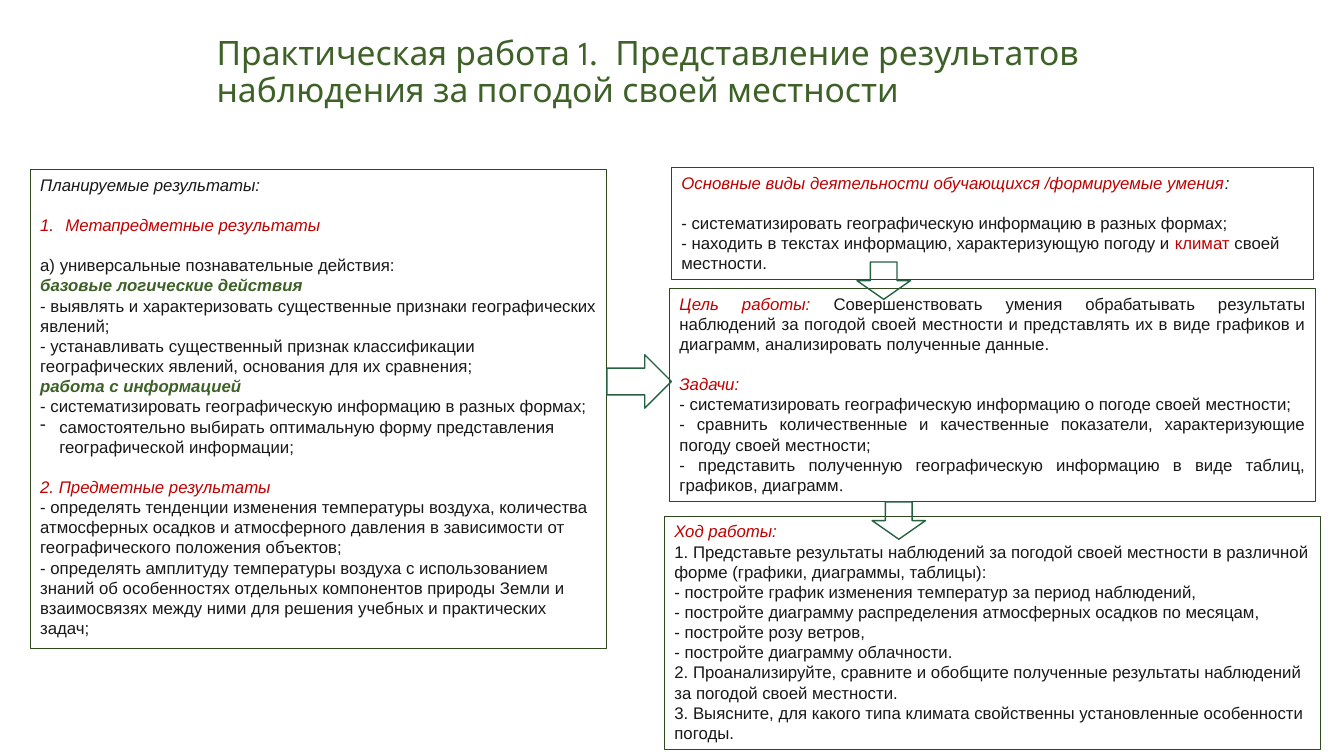
"""Build the slide about presenting local weather observations."""
import lxml.etree
import pptx
import pptx.dml.color
import pptx.enum.shapes
import pptx.enum.text
import pptx.oxml.ns
import pptx.util

Inches = pptx.util.Inches
Pt = pptx.util.Pt
ALIGN = pptx.enum.text.PP_ALIGN
ANCHOR = pptx.enum.text.MSO_ANCHOR
SHAPE = pptx.enum.shapes.MSO_SHAPE

COLORS = {
    "body": "181818",
    "red": "C00000",
    "green": "3E6128",
    "frame": "2E491E",
    "arrow": "266241",
}
STYLES = {
    "body": ("body", "Arial", False, False),
    "serif": ("body", "Times New Roman", False, False),
    "caption": ("body", "Arial", False, True),
    "heading": ("red", "Arial", False, True),
    "term": ("red", "Arial", False, False),
    "action": ("green", "Arial", True, True),
}
BLANK_LINE = 14.4

RESULTS = [
    {"spans": [("caption", "Планируемые результаты:")]},
    {"spans": [("heading", "Метапредметные результаты")], "gap": True,
     "bullet": ("buAutoNum", "type", "arabicPeriod"), "indent": 0.25},
    {"spans": [("body", "а) универсальные познавательные действия:")], "gap": True},
    {"spans": [("action", "базовые логические действия")]},
    {"spans": [("body", "- выявлять и характеризовать существенные признаки географических явлений;")]},
    {"spans": [("body", "- устанавливать существенный признак классификации географических явлений, "
                        "основания для их сравнения;")]},
    {"spans": [("action", "работа с информацией")]},
    {"spans": [("body", "- систематизировать географическую информацию в разных формах;")]},
    {"spans": [("body", "самостоятельно выбирать оптимальную форму представления географической информации;")],
     "bullet": ("buChar", "char", "-"), "indent": 0.19},
    {"spans": [("heading", "2. Предметные результаты")], "gap": True},
    {"spans": [("body", "- определять тенденции изменения температуры воздуха, количества атмосферных осадков "
                        "и атмосферного давления в зависимости от географического положения объектов;")]},
    {"spans": [("body", "- определять амплитуду температуры воздуха с использованием знаний об особенностях "
                        "отдельных компонентов природы Земли и взаимосвязях между ними для решения учебных "
                        "и практических задач;")]},
]
ACTIVITIES = [
    {"spans": [("heading", "Основные виды деятельности обучающихся /формируемые умения"), ("caption", ":")]},
    {"spans": [("body", "- систематизировать географическую информацию в разных формах;")], "gap": True},
    {"spans": [("body", "- находить в текстах информацию, характеризующую погоду и "),
               ("term", "климат"), ("body", " своей местности.")]},
]
GOALS = [
    {"spans": [("heading", "Цель работы: "),
               ("body", "Совершенствовать умения обрабатывать результаты наблюдений за погодой своей местности "
                        "и представлять их в виде графиков и диаграмм, анализировать полученные данные.")]},
    {"spans": [("heading", "Задачи: ")], "gap": True},
    {"spans": [("body", "- систематизировать географическую информацию о погоде своей местности;")]},
    {"spans": [("body", "- сравнить количественные и качественные показатели, характеризующие погоду "
                        "своей местности;")]},
    {"spans": [("body", "- представить полученную географическую информацию в виде таблиц, графиков, диаграмм"),
               ("serif", ". ")]},
]
STEPS = [
    {"spans": [("heading", "Ход работы:")]},
    {"spans": [("body", "1. Представьте результаты наблюдений за погодой своей местности в различной форме "
                        "(графики, диаграммы, таблицы):")]},
    {"spans": [("body", "- постройте график изменения температур за период наблюдений,")]},
    {"spans": [("body", "- постройте диаграмму распределения атмосферных осадков по месяцам,")]},
    {"spans": [("body", "- постройте розу ветров,")]},
    {"spans": [("body", "- постройте диаграмму облачности.")]},
    {"spans": [("body", "2. Проанализируйте, сравните и обобщите полученные результаты наблюдений "
                        "за погодой своей местности.")]},
    {"spans": [("body", "3. Выясните, для какого типа климата свойственны установленные особенности погоды.")]},
]


def color(name):
    """Return the named colour."""
    return pptx.dml.color.RGBColor.from_string(COLORS[name])


def set_font(font, style):
    """Apply a named text style to a font."""
    color_name, font.name, font.bold, font.italic = STYLES[style]
    font.size = Pt(12)
    font.color.rgb = color(color_name)


def set_bullet(para, bullet, indent):
    """Give a paragraph a hanging bullet or number."""
    tag, attribute, value = bullet
    properties = para._p.get_or_add_pPr()
    properties.set("marL", str(Inches(indent)))
    properties.set("indent", str(-Inches(indent)))
    mark = lxml.etree.SubElement(properties, pptx.oxml.ns.qn("a:" + tag))
    mark.set(attribute, value)


def fill_para(para, spans, align, gap=False, bullet=None, indent=0):
    """Write styled spans into a paragraph."""
    para.alignment = align
    if gap:
        para.space_before = Pt(BLANK_LINE)
    if bullet:
        set_bullet(para, bullet, indent)
    if len(spans) == 1:
        set_font(para.font, spans[0][0])
    for style, text in spans:
        span = para.add_run()
        span.text = text
        if len(spans) > 1:
            set_font(span.font, style)


def add_outline(page, kind, place, line_color, width):
    """Add an unfilled preset shape."""
    shape = page.shapes.add_shape(kind, *map(Inches, place))
    shape.shadow.inherit = False
    shape.fill.background()
    shape.line.color.rgb = color(line_color)
    shape.line.width = Pt(width)
    return shape


def add_panel(page, place, content, align=ALIGN.LEFT):
    """Add a framed box of text."""
    box = add_outline(page, SHAPE.RECTANGLE, place, "frame", 0.75)
    frame = box.text_frame
    frame.word_wrap = True
    frame.vertical_anchor = ANCHOR.TOP
    for number, entry in enumerate(content):
        para = frame.add_paragraph() if number else frame.paragraphs[0]
        fill_para(para, align=align, **entry)


def add_title(page, text):
    """Add the slide heading."""
    box = page.shapes.add_textbox(*map(Inches, (2.05, 0, 10.89, 1.45)))
    box.text_frame.word_wrap = True
    box.text_frame.vertical_anchor = ANCHOR.MIDDLE
    para = box.text_frame.paragraphs[0]
    para.text = text
    para.line_spacing = 0.9
    para.font.name = "League Spartan"
    para.font.size = Pt(24)
    para.font.color.rgb = color("green")


def main():
    """Build and save the deck."""
    deck = pptx.Presentation()
    deck.slide_width, deck.slide_height = Inches(13.33), Inches(7.5)
    page = deck.slides.add_slide(deck.slide_layouts[6])
    add_title(page, "Практическая работа 1.  Представление результатов наблюдения за погодой своей местности")
    add_panel(page, (0.3, 1.68, 5.72, 4.75), RESULTS)
    add_panel(page, (6.66, 1.66, 6.37, 1.11), ACTIVITIES)
    add_panel(page, (6.64, 2.86, 6.41, 2.12), GOALS, ALIGN.JUSTIFY)
    add_panel(page, (6.59, 5.12, 6.51, 2.32), STEPS)
    add_outline(page, SHAPE.RIGHT_ARROW, (6.02, 3.52, 0.64, 0.53), "arrow", 1)
    for left, top in ((8.5, 2.6), (8.65, 4.98)):
        add_outline(page, SHAPE.DOWN_ARROW, (left, top, 0.53, 0.37), "arrow", 1)
    deck.save("out.pptx")


if __name__ == "__main__":
    main()
